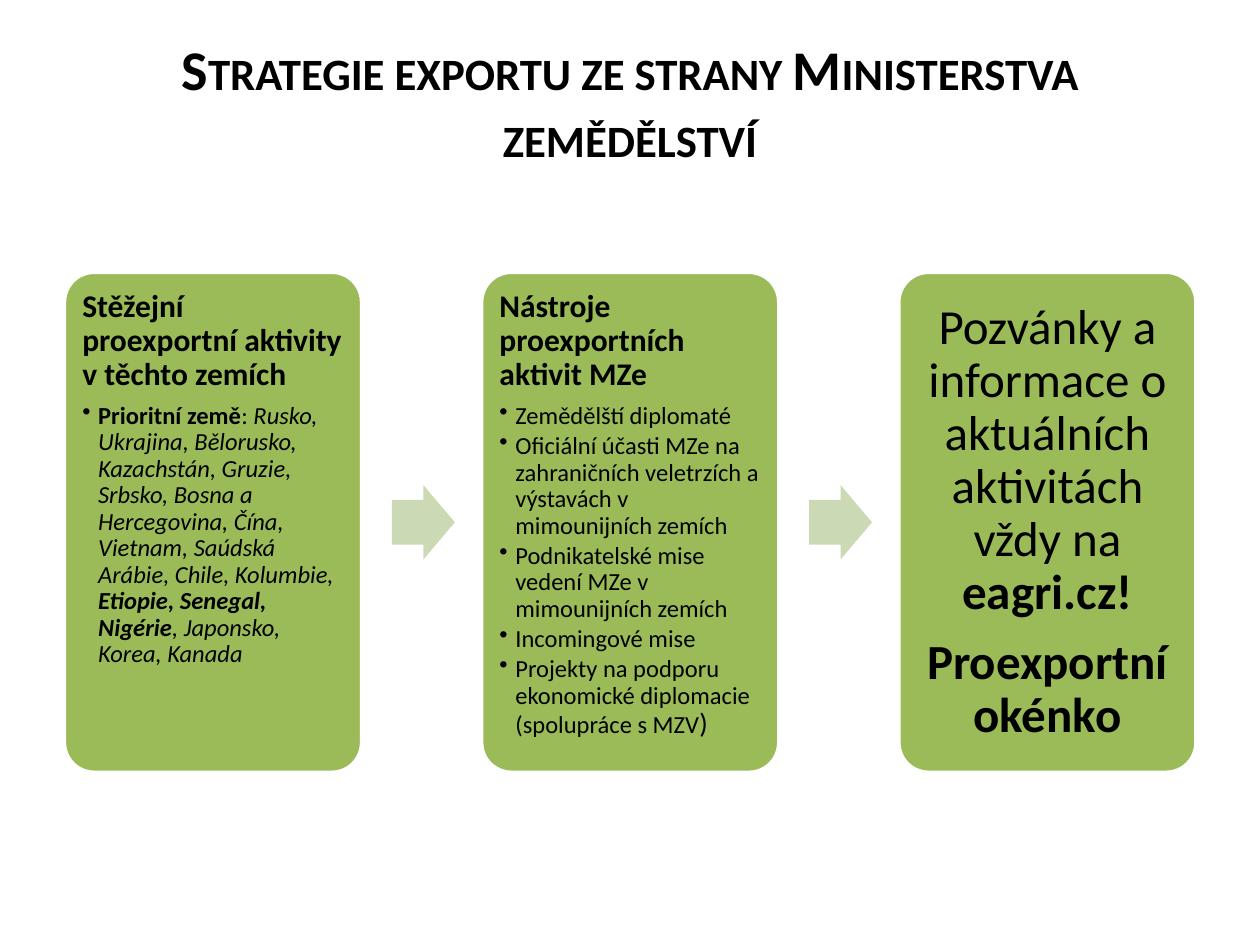
from lxml import etree
from pptx import Presentation
from pptx import util as u
from pptx.dml.color import RGBColor
from pptx.enum import shapes, text
from pptx.oxml.ns import qn

THEME = {
    "font": "Calibri",
    "ink": RGBColor.from_string("000000"),
    "card": RGBColor.from_string("9BBB59"),
    "arrow": RGBColor.from_string("CBDAB5"),
    "edge": RGBColor.from_string("FFFFFF"),
    "title": 32,
    "heading": 18,
    "item": 14,
    "bracket": 16,
    "callout": 28,
}
LEFT, TOP, WIDTH, HEIGHT = 1.3, 5.49, 5.99, 10.08
PITCH, PADDING = 8.41, 0.18
ARROW = {"offset": 6.6, "top": 9.78, "width": 1.27, "height": 1.5}

HEADING = {"kind": "heading", "bold": True}
ITEM = {"kind": "item"}
CALLOUT = {"kind": "callout"}
BOLD = {"bold": True}
ITALIC = {"italic": True}

columns = [
    [
        (HEADING, [("Stěžejní proexportní aktivity v těchto zemích", {})]),
        (ITEM, [
            ("Prioritní země", BOLD),
            (": ", {}),
            ("Rusko, Ukrajina, Bělorusko, Kazachstán, Gruzie, Srbsko, Bosna a "
             "Hercegovina, Čína, Vietnam, Saúdská Arábie, Chile, Kolumbie, ", ITALIC),
            ("Etiopie, Senegal, Nigérie", BOLD | ITALIC),
            (", Japonsko, Korea, Kanada", ITALIC),
        ]),
    ],
    [
        (HEADING, [("Nástroje proexportních aktivit MZe", {})]),
        (ITEM, [("Zemědělští diplomaté", {})]),
        (ITEM, [("Oficiální účasti MZe na zahraničních veletrzích a výstavách v mimounijních zemích", {})]),
        (ITEM, [("Podnikatelské mise vedení MZe v mimounijních zemích", {})]),
        (ITEM, [("Incomingové mise", {})]),
        (ITEM, [
            ("Projekty na podporu ekonomické diplomacie (spolupráce s MZV", {}),
            (")", {"size": u.Pt(THEME["bracket"])}),
        ]),
    ],
    [
        (CALLOUT, [
            ("Pozvánky a informace o aktuálních aktivitách vždy na ", {}),
            ("eagri.cz!", BOLD),
        ]),
        (CALLOUT, [("Proexportní okénko", BOLD)]),
    ],
]
spacing = {"heading": 6.3, "item": 2.1, "callout": 9.8}


def add_span(para, wording, size, formats):
    span = para.add_run()
    span.text = wording
    span.font.color.rgb = THEME["ink"]
    values = {"name": THEME["font"], "size": u.Pt(size), "bold": False, "italic": False}
    for name, value in (values | formats).items():
        setattr(span.font, name, value)
    return span


def add_block(page, kind, left, top, width, height, fill):
    block = page.shapes.add_shape(kind, u.Cm(left), u.Cm(top), u.Cm(width), u.Cm(height))
    block.shadow.inherit = False
    block.fill.solid()
    block.fill.fore_color.rgb = fill
    block.line.fill.background()
    return block


deck = Presentation()
deck.slide_width, deck.slide_height = u.Cm(25.4), u.Cm(19.05)
page = deck.slides.add_slide(deck.slide_layouts[6])

title = page.shapes.add_textbox(u.Cm(1.27), u.Cm(0.76), u.Cm(22.86), u.Cm(2.57))
title.text_frame.word_wrap = True
title.text_frame.vertical_anchor = text.MSO_ANCHOR.MIDDLE
para = title.text_frame.paragraphs[0]
para.alignment = text.PP_ALIGN.CENTER
span = add_span(para, "Strategie exportu ze strany Ministerstva zemědělství", THEME["title"], BOLD)
span.font._element.set("cap", "small")

for index, paragraphs in enumerate(columns):
    left = LEFT + index * PITCH
    card = add_block(page, shapes.MSO_SHAPE.ROUNDED_RECTANGLE, left, TOP, WIDTH, HEIGHT, THEME["card"])
    card.adjustments[0] = 0.1
    card.line.color.rgb = THEME["edge"]
    card.line.width = u.Pt(2)

    box = page.shapes.add_textbox(
        u.Cm(left + PADDING), u.Cm(TOP + PADDING),
        u.Cm(WIDTH - 2 * PADDING), u.Cm(HEIGHT - 2 * PADDING),
    )
    centred = paragraphs[0][0] is CALLOUT
    frame = box.text_frame
    frame.word_wrap = True
    frame.vertical_anchor = text.MSO_ANCHOR.MIDDLE if centred else text.MSO_ANCHOR.TOP
    for side in ("left", "top", "right", "bottom"):
        setattr(frame, f"margin_{side}", u.Cm(0.3 if centred else 0.18))

    for number, (style, spans) in enumerate(paragraphs):
        para = frame.add_paragraph() if number else frame.paragraphs[0]
        kind = style["kind"]
        if kind == "item":
            para.level = 1
            properties = para._p.get_or_add_pPr()
            properties.set("marL", str(u.Cm(0.32)))
            properties.set("indent", str(-u.Cm(0.32)))
            etree.SubElement(properties, qn("a:buChar")).set("char", "•")
        formats = {
            "alignment": text.PP_ALIGN.CENTER if centred else text.PP_ALIGN.LEFT,
            "line_spacing": 0.9,
            "space_after": u.Pt(spacing[kind]),
        }
        for name, value in formats.items():
            setattr(para, name, value)
        for wording, emphasis in spans:
            add_span(para, wording, THEME[kind], {"bold": style.get("bold", False)} | emphasis)

    if index < len(columns) - 1:
        arrow = add_block(
            page, shapes.MSO_SHAPE.RIGHT_ARROW, left + ARROW["offset"], ARROW["top"],
            ARROW["width"], ARROW["height"], THEME["arrow"],
        )
        arrow.adjustments[0] = 0.6
        arrow.adjustments[1] = 0.5

deck.save("out.pptx")
